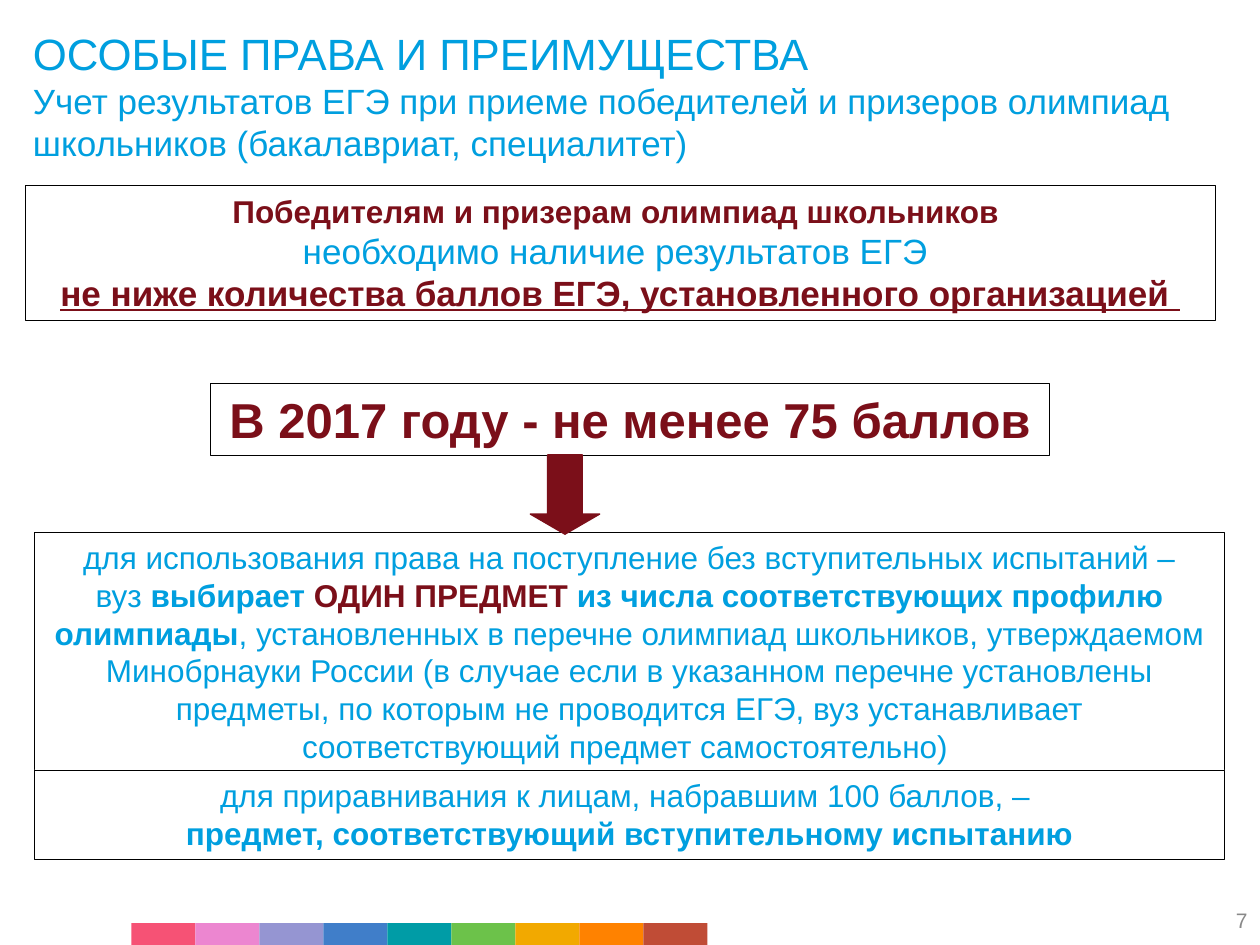
"""Build the slide on exam score requirements for olympiad winners."""
from pptx import Presentation
from pptx.dml.color import RGBColor
from pptx.enum.shapes import MSO_SHAPE
from pptx.enum.text import MSO_ANCHOR, MSO_AUTO_SIZE, PP_ALIGN
from pptx.util import Cm, Pt

BLUE = RGBColor(0x00, 0x9F, 0xDF)
MAROON = RGBColor(0x7B, 0x0F, 0x19)
BLACK = RGBColor(0x00, 0x00, 0x00)
WHITE = RGBColor(0xFF, 0xFF, 0xFF)
GREY = RGBColor(0x89, 0x89, 0x89)
STRIP_COLOURS = [
    RGBColor(0xF6, 0x52, 0x75), RGBColor(0xEC, 0x86, 0xD0), RGBColor(0x95, 0x95, 0xD2),
    RGBColor(0x40, 0x7E, 0xC9), RGBColor(0x00, 0x9C, 0xA6), RGBColor(0x6C, 0xC2, 0x4A),
    RGBColor(0xF2, 0xA9, 0x00), RGBColor(0xFF, 0x82, 0x00), RGBColor(0xC0, 0x4C, 0x36),
]


class RequirementsSlide:
    font_name = "Arial"

    def __init__(self, deck):
        self.slide = deck.slides.add_slide(deck.slide_layouts[5])

    def style(self, font, size, colour, bold=False):
        font.name, font.size, font.bold = self.font_name, Pt(size), bold
        font.color.rgb = colour

    def add_lines(self, frame, lines, align):
        for index, (runs, size, colour, bold) in enumerate(lines):
            paragraph = frame.paragraphs[0] if index == 0 else frame.add_paragraph()
            paragraph.alignment = align
            self.style(paragraph.font, size, colour, bold)
            for words, changes in runs:
                run = paragraph.add_run()
                run.text = words
                if "colour" in changes:
                    run.font.color.rgb = changes["colour"]
                if "bold" in changes:
                    run.font.bold = changes["bold"]
                if "underline" in changes:
                    run.font.underline = changes["underline"]

    def title(self, place, lines):
        heading = self.slide.shapes.title
        heading.left, heading.top, heading.width, heading.height = map(Cm, place)
        frame = heading.text_frame
        frame.word_wrap = True
        frame.auto_size = MSO_AUTO_SIZE.NONE
        frame.vertical_anchor = MSO_ANCHOR.TOP
        self.add_lines(frame, lines, PP_ALIGN.LEFT)

    def block(self, kind, place, fill, line=None, width=0.25):
        block = self.slide.shapes.add_shape(kind, *map(Cm, place))
        block.shadow.inherit = False
        block.fill.solid()
        block.fill.fore_color.rgb = fill
        if line is None:
            block.line.fill.background()
        else:
            block.line.color.rgb = line
            block.line.width = Pt(width)
        return block

    def box(self, place, lines):
        frame = self.block(MSO_SHAPE.RECTANGLE, place, WHITE, BLACK).text_frame
        frame.word_wrap = True
        frame.auto_size = MSO_AUTO_SIZE.SHAPE_TO_FIT_TEXT
        frame.vertical_anchor = MSO_ANCHOR.TOP
        self.add_lines(frame, lines, PP_ALIGN.CENTER)

    def arrow(self, place):
        arrow = self.block(MSO_SHAPE.DOWN_ARROW, place, MAROON, MAROON, 0.75)
        arrow.adjustments[0] = 0.5
        arrow.adjustments[1] = 0.29

    def strip(self, left, top, width, height):
        for index, colour in enumerate(STRIP_COLOURS):
            self.block(MSO_SHAPE.RECTANGLE, (left + index * width, top, width, height), colour)

    def page_number(self, place, number):
        frame = self.slide.shapes.add_textbox(*map(Cm, place)).text_frame
        frame.word_wrap = True
        frame.vertical_anchor = MSO_ANCHOR.MIDDLE
        self.add_lines(frame, [([(number, {})], 12, GREY, False)], PP_ALIGN.RIGHT)


def main():
    deck = Presentation()
    deck.slide_width, deck.slide_height = Cm(25.4), Cm(19.05)
    page = RequirementsSlide(deck)

    page.strip(2.65, 18.61, 1.29, 0.44)
    page.title((0.41, 0.41, 24.4, 1.2), [
        ([("ОСОБЫЕ ПРАВА И ПРЕИМУЩЕСТВА", {})], 25, BLUE, False),
        ([("Учет результатов ЕГЭ при приеме победителей и призеров олимпиад "
           "школьников (бакалавриат, специалитет)", {})], 20, BLUE, False),
    ])
    page.box((0.5, 3.74, 24, 2.72), [
        ([("Победителям и призерам олимпиад школьников ", {})], 18, MAROON, True),
        ([("необходимо наличие результатов ЕГЭ ", {})], 20, BLUE, False),
        ([("не ниже количества баллов ЕГЭ, установленного организацией ",
           {"underline": True})], 20, MAROON, True),
    ])
    page.box((0.69, 10.72, 24, 4.85), [
        ([("для использования права на поступление без вступительных испытаний –", {})],
         18, BLUE, False),
        ([("вуз", {}),
          (" выбирает ", {"bold": True}),
          ("ОДИН ПРЕДМЕТ", {"bold": True, "colour": MAROON}),
          (" из числа соответствующих профилю олимпиады", {"bold": True}),
          (", установленных в перечне олимпиад школьников, утверждаемом Минобрнауки "
           "России (в случае если в указанном перечне установлены предметы, по которым "
           "не проводится ЕГЭ, вуз устанавливает соответствующий предмет "
           "самостоятельно) ", {})], 18, BLUE, False),
    ])
    page.box((0.69, 15.52, 24, 1.8), [
        ([("для приравнивания к лицам, набравшим 100 баллов, – ", {})], 18, BLUE, False),
        ([("предмет, соответствующий вступительному испытанию", {})], 18, BLUE, True),
    ])
    page.page_number((19.48, 18.03, 5.92, 1.02), "7")
    page.box((4.24, 7.72, 16.92, 1.45), [
        ([("В 2017 году - не менее 75 баллов ", {})], 28, MAROON, True),
    ])
    page.arrow((10.69, 9.17, 1.4, 1.6))

    deck.save("out.pptx")


if __name__ == "__main__":
    main()
